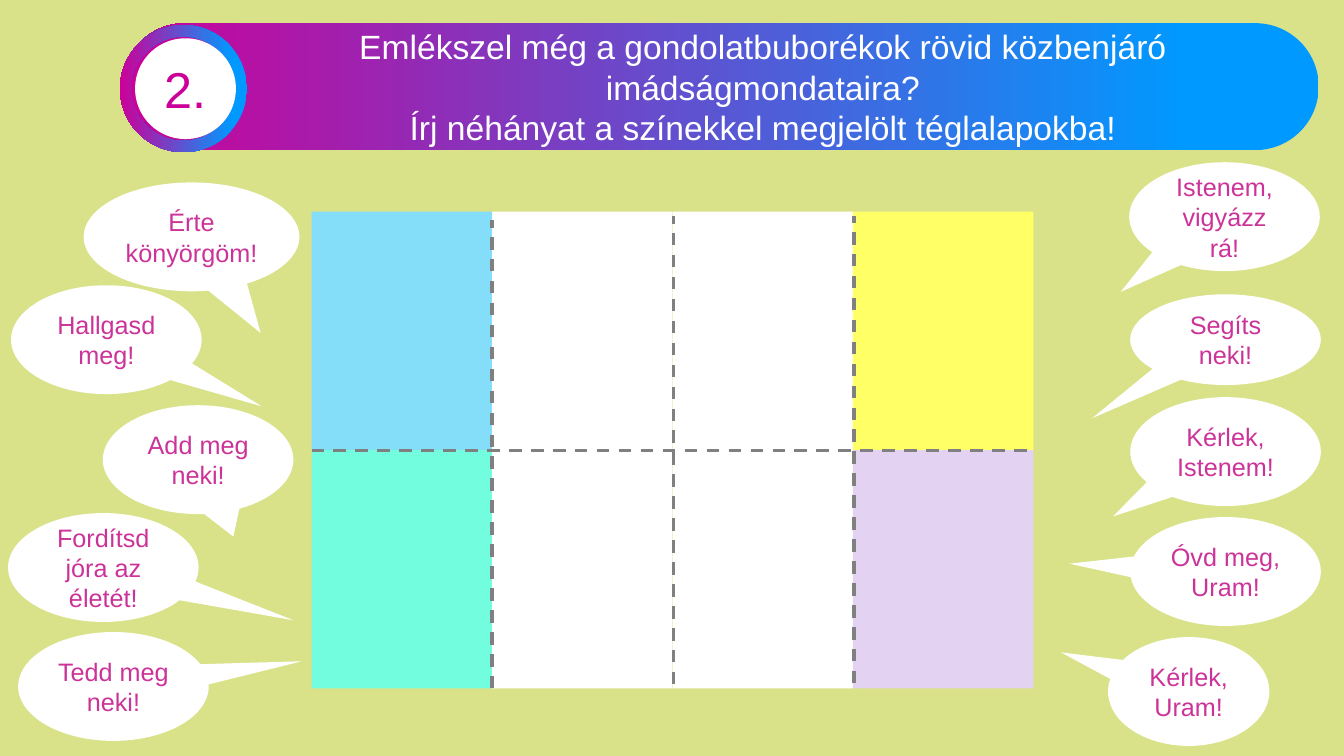
from typing import NamedTuple

import pptx
import pptx.dml.color
import pptx.enum.dml
import pptx.enum.shapes
import pptx.enum.text
import pptx.util
from lxml import etree
from pptx.util import Inches

SHAPE = pptx.enum.shapes.MSO_SHAPE
WHITE, MAGENTA, PINK, BLUE, GREY = "FFFFFF", "CC0099", "CC3399", "0099FF", "808080"
GRID_LEFT, GRID_TOP, CELL_W, CELL_H = 3.09, 2.1, 1.79, 2.365
CELL_COLORS = [
    ["84DDF9", WHITE, WHITE, "FFFF66"],
    ["72FDDF", WHITE, WHITE, "E4D2F2"],
]


class Box(NamedTuple):
    left: float
    top: float
    width: float
    height: float


class Bubble(NamedTuple):
    text: str
    box: Box
    tip_x: float
    tip_y: float


class Fold(NamedTuple):
    x1: float
    y1: float
    x2: float
    y2: float


BUBBLES = [
    Bubble("Fordítsd jóra az életét!", Box(0.08, 5.09, 1.89, 1.08), 0.998, 0.485),
    Bubble("Tedd meg neki!", Box(0.18, 6.27, 1.89, 1.08), 0.989, -0.231),
    Bubble("Segíts neki!", Box(11.21, 2.92, 1.89, 0.9), -0.7, 0.866),
    Bubble("Add meg neki!", Box(1.02, 4.02, 1.89, 1.08), 0.185, 0.707),
    Bubble("Kérlek, Istenem!", Box(11.21, 3.94, 1.89, 1.08), -0.591, 0.596),
    Bubble("Óvd meg, Uram!", Box(11.21, 5.13, 1.89, 1.08), -0.819, -0.072),
    Bubble("Istenem, vigyázz rá!", Box(11.2, 1.61, 1.89, 1.08), -0.545, 0.691),
    Bubble("Érte könyörgöm!", Box(0.83, 1.81, 2.14, 1.08), 0.32, 0.882),
    Bubble("Kérlek, Uram!", Box(10.99, 6.32, 1.6, 1.08), -0.792, -0.359),
    Bubble("Hallgasd meg!", Box(0.11, 2.83, 1.89, 1.08), 0.815, 0.612),
]
FOLDS = [
    Fold(3.09, 4.47, 10.25, 4.47),
    Fold(4.88, 6.83, 4.88, 2.18),
    Fold(6.68, 6.79, 6.68, 2.14),
    Fold(8.47, 6.78, 8.47, 2.14),
]


def rgb(color: str) -> pptx.dml.color.RGBColor:
    return pptx.dml.color.RGBColor.from_string(color)


def add_shape(s, kind, box: Box, color: str | None = None, adj: tuple[float, ...] = ()):
    """Add a borderless shape; without a color it gets the magenta-blue gradient."""
    sp = s.shapes.add_shape(kind, *(Inches(v) for v in box))
    sp.shadow.inherit = False
    sp.line.fill.background()
    for i, value in enumerate(adj):
        sp.adjustments[i] = value
    if color:
        sp.fill.solid()
        sp.fill.fore_color.rgb = rgb(color)
    else:
        sp.fill.gradient()
        sp.fill.gradient_angle = 180
        for stop, (pos, c) in zip(sp.fill.gradient_stops, [(0.11, BLUE), (1, MAGENTA)]):
            stop.position = pos
            stop.color.rgb = rgb(c)
    return sp


def set_text(sp, lines: list[str], size: float, color: str) -> None:
    tf = sp.text_frame
    tf.word_wrap = True
    tf.vertical_anchor = pptx.enum.text.MSO_ANCHOR.MIDDLE
    for i, line in enumerate(lines):
        p = tf.add_paragraph() if i else tf.paragraphs[0]
        p.text = line
        p.alignment = pptx.enum.text.PP_ALIGN.CENTER
        p.font.name = "Arial"
        p.font.size = pptx.util.Pt(size)
        p.font.color.rgb = rgb(color)


def add_fold(s, fold: Fold) -> None:
    """Add a dashed folding line."""
    cn = s.shapes.add_connector(
        pptx.enum.shapes.MSO_CONNECTOR.STRAIGHT, *(Inches(v) for v in fold))
    cn.line.color.rgb = rgb(GREY)
    cn.line.width = pptx.util.Pt(2.25)
    cn.line.dash_style = pptx.enum.dml.MSO_LINE.DASH
    etree.SubElement(cn._element.spPr, pptx.oxml.ns.qn("a:effectLst"))


def add_header(s) -> None:
    banner = add_shape(s, SHAPE.ROUNDED_RECTANGLE, Box(1.21, 0.23, 11.87, 1.26), adj=(0.5,))
    banner.text_frame.margin_left = Inches(0.94)
    set_text(banner, [
        "Emlékszel még a gondolatbuborékok rövid közbenjáró imádságmondataira?",
        "Írj néhányat a színekkel megjelölt téglalapokba!",
    ], 24, WHITE)
    add_shape(s, SHAPE.DONUT, Box(1.19, 0.25, 1.26, 1.26), adj=(0.089,))
    number = add_shape(s, SHAPE.OVAL, Box(1.34, 0.38, 1, 1), WHITE)
    set_text(number, ["2."], 36, MAGENTA)


def main() -> None:
    prs = pptx.Presentation()
    prs.slide_width, prs.slide_height = Inches(13.33), Inches(7.5)
    s = prs.slides.add_slide(prs.slide_layouts[6])
    s.background.fill.solid()
    s.background.fill.fore_color.rgb = rgb("D9E289")

    add_header(s)
    for row, colors in enumerate(CELL_COLORS):
        for col, color in enumerate(colors):
            cell = Box(GRID_LEFT + col * CELL_W, GRID_TOP + row * CELL_H, CELL_W, CELL_H)
            add_shape(s, SHAPE.RECTANGLE, cell, color)
    for fold in FOLDS:
        add_fold(s, fold)
    for bubble in BUBBLES:
        sp = add_shape(s, SHAPE.OVAL_CALLOUT, bubble.box, WHITE, (bubble.tip_x, bubble.tip_y))
        set_text(sp, [bubble.text], 18, PINK)

    prs.save("out.pptx")


if __name__ == "__main__":
    main()
